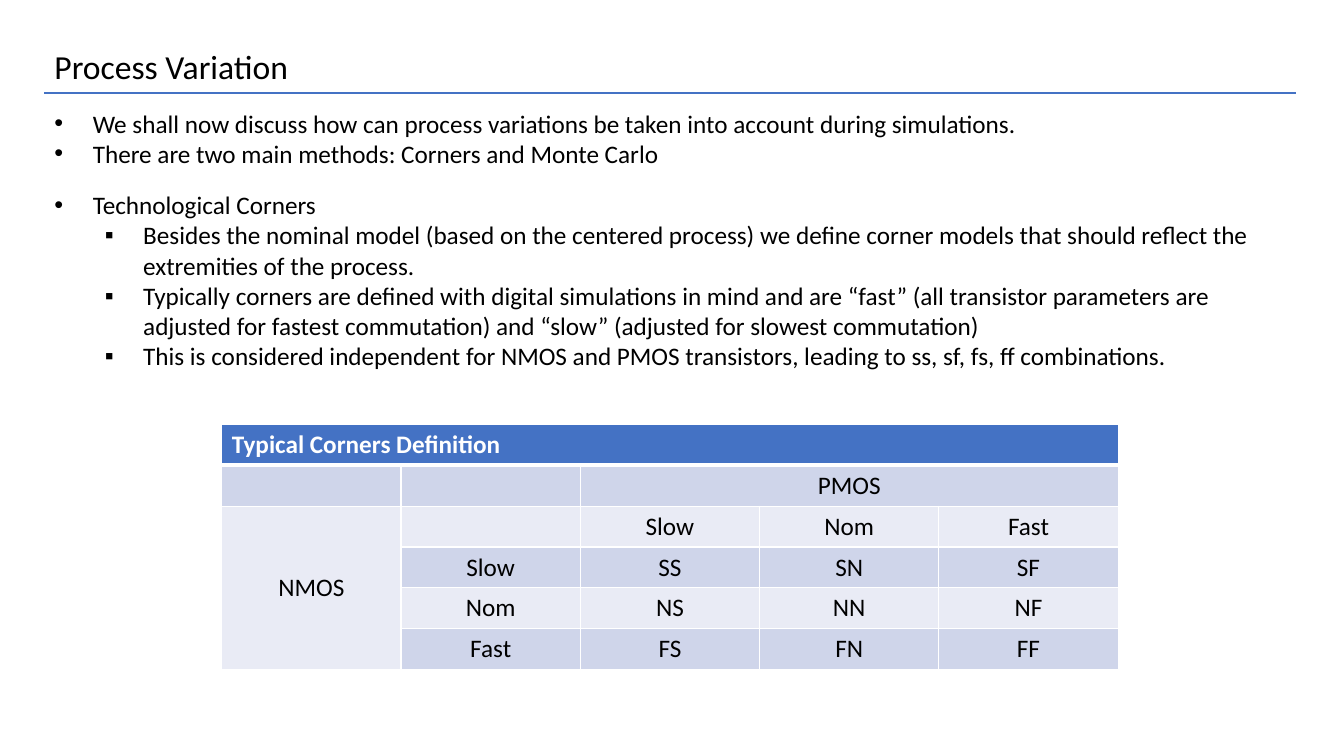
import pptx
import pptx.util
import pptx.dml.color
import pptx.enum.shapes
import pptx.enum.text
import pptx.oxml
import pptx.oxml.ns
import lxml.etree

PX = 9144
COLORS = {
    "accent": "4472C4",
    "text": "000000",
    "white": "FFFFFF",
    "band_dark": "CFD5EA",
    "band_light": "E9EBF5",
}
FONT = "Calibri"
BULLETS = ["•", "▪"]
INDENTS = [38, 88]
HANGING = 38

METHODS = [
    (0, "We shall now discuss how can process variations be taken into account during simulations."),
    (0, "There are two main methods: Corners and Monte Carlo"),
]
CORNERS = [
    (0, "Technological Corners"),
    (1, "Besides the nominal model (based on the centered process) we define corner models "
        "that should reflect the extremities of the process."),
    (1, "Typically corners are defined with digital simulations in mind and are “fast” "
        "(all transistor parameters are adjusted for fastest commutation) and “slow” "
        "(adjusted for slowest commutation)"),
    (1, "This is considered independent for NMOS and PMOS transistors, leading to ss, sf, fs, ff combinations."),
]
CORNER_ROWS = [
    ["Typical Corners Definition", "", "", "", ""],
    ["", "", "PMOS", "", ""],
    ["NMOS", "", "Slow", "Nom", "Fast"],
    ["", "Slow", "SS", "SN", "SF"],
    ["", "Nom", "NS", "NN", "NF"],
    ["", "Fast", "FS", "FN", "FF"],
]
MERGES = [((0, 0), (0, 4)), ((1, 2), (1, 4)), ((2, 0), (5, 0))]


def color(name):
    """Return the named colour."""
    return pptx.dml.color.RGBColor.from_string(COLORS[name])


def place(shape, box):
    """Move a shape to a box of left, top, width and height in px."""
    shape.left, shape.top, shape.width, shape.height = (value * PX for value in box)


def add_run(paragraph, text, size=18, color_name="text", bold=False):
    """Add one formatted run."""
    run = paragraph.add_run()
    run.text = text
    run.font.name = FONT
    run.font.size = pptx.util.Pt(size)
    run.font.bold = bold
    run.font.color.rgb = color(color_name)


def prepare_frame(shape, wrap):
    """Set a placeholder's text frame to top anchored, unscaled text."""
    frame = shape.text_frame
    frame.word_wrap = wrap
    frame.auto_size = pptx.enum.text.MSO_AUTO_SIZE.NONE
    frame.vertical_anchor = pptx.enum.text.MSO_ANCHOR.TOP
    return frame


def add_header(slide, box):
    """Fill the title and draw the rule along the bottom of the box."""
    left, top, width, height = box
    title = slide.shapes.title
    place(title, (left, top, 254, 50))
    paragraph = prepare_frame(title, False).paragraphs[0]
    paragraph.alignment = pptx.enum.text.PP_ALIGN.LEFT
    add_run(paragraph, "Process Variation", 24)
    bottom = (top + height) * PX
    rule = slide.shapes.add_connector(
        pptx.enum.shapes.MSO_CONNECTOR.STRAIGHT, left * PX, bottom, (left + width) * PX, bottom)
    rule.line.color.rgb = color("accent")
    rule.line.width = pptx.util.Pt(1.5)
    lxml.etree.SubElement(rule._element.spPr, pptx.oxml.ns.qn("a:effectLst"))


def fill_list(placeholder, box, items):
    """Fill a body placeholder with bulleted paragraphs."""
    place(placeholder, box)
    frame = prepare_frame(placeholder, True)
    for index, (level, text) in enumerate(items):
        paragraph = frame.add_paragraph() if index else frame.paragraphs[0]
        paragraph.level = level
        paragraph.space_before = pptx.util.Pt(0)
        properties = paragraph._p.get_or_add_pPr()
        properties.set("marL", str(INDENTS[level] * PX))
        properties.set("indent", str(-HANGING * PX))
        for tag, key, value in (("buFont", "typeface", "Arial"), ("buChar", "char", BULLETS[level])):
            lxml.etree.SubElement(properties, pptx.oxml.ns.qn("a:" + tag)).set(key, value)
        add_run(paragraph, text)


def set_borders(cell, top, bottom):
    """Give a cell white borders with the given top and bottom widths in points."""
    properties = cell._tc.get_or_add_tcPr()
    for index, (side, width) in enumerate(zip("LRTB", (1, 1, top, bottom))):
        border = pptx.oxml.parse_xml(
            f'<a:ln{side} {pptx.oxml.ns.nsdecls("a")} w="{pptx.util.Pt(width)}"><a:solidFill>'
            f'<a:srgbClr val="{COLORS["white"]}"/></a:solidFill></a:ln{side}>')
        properties.insert(index, border)


def add_corner_table(slide, box):
    """Draw the table of corner combinations."""
    left, top, width, height = (value * PX for value in box)
    row_count, column_count = len(CORNER_ROWS), len(CORNER_ROWS[0])
    table = slide.shapes.add_table(row_count, column_count, left, top, width, height).table
    for start, end in MERGES:
        table.cell(*start).merge(table.cell(*end))
    for row, texts in enumerate(CORNER_ROWS):
        header = row == 0
        band = "accent" if header else "band_dark" if row % 2 else "band_light"
        for column, text in enumerate(texts):
            cell = table.cell(row, column)
            cell.fill.solid()
            cell.fill.fore_color.rgb = color(band)
            cell.vertical_anchor = pptx.enum.text.MSO_ANCHOR.MIDDLE
            set_borders(cell, 3 if row == 1 else 1, 3 if header else 1)
            if text:
                paragraph = cell.text_frame.paragraphs[0]
                align = pptx.enum.text.PP_ALIGN
                paragraph.alignment = align.LEFT if header else align.CENTER
                add_run(paragraph, text, color_name="white" if header else "text", bold=header)


def build_process_slide(presentation):
    """Build the process variation slide."""
    slide = presentation.slides.add_slide(presentation.slide_layouts.get_by_name("Two Content"))
    title, methods, corners = list(slide.placeholders)[:3]
    add_header(slide, (44, 41, 1241, 51))
    fill_list(methods, (44, 102, 1241, 71), METHODS)
    fill_list(corners, (44, 183, 1241, 192), CORNERS)
    add_corner_table(slide, (220, 421, 889, 243))


def main():
    """Create and save the presentation."""
    presentation = pptx.Presentation()
    presentation.slide_width = 1333 * PX
    presentation.slide_height = 750 * PX
    build_process_slide(presentation)
    presentation.save("out.pptx")


if __name__ == "__main__":
    main()
